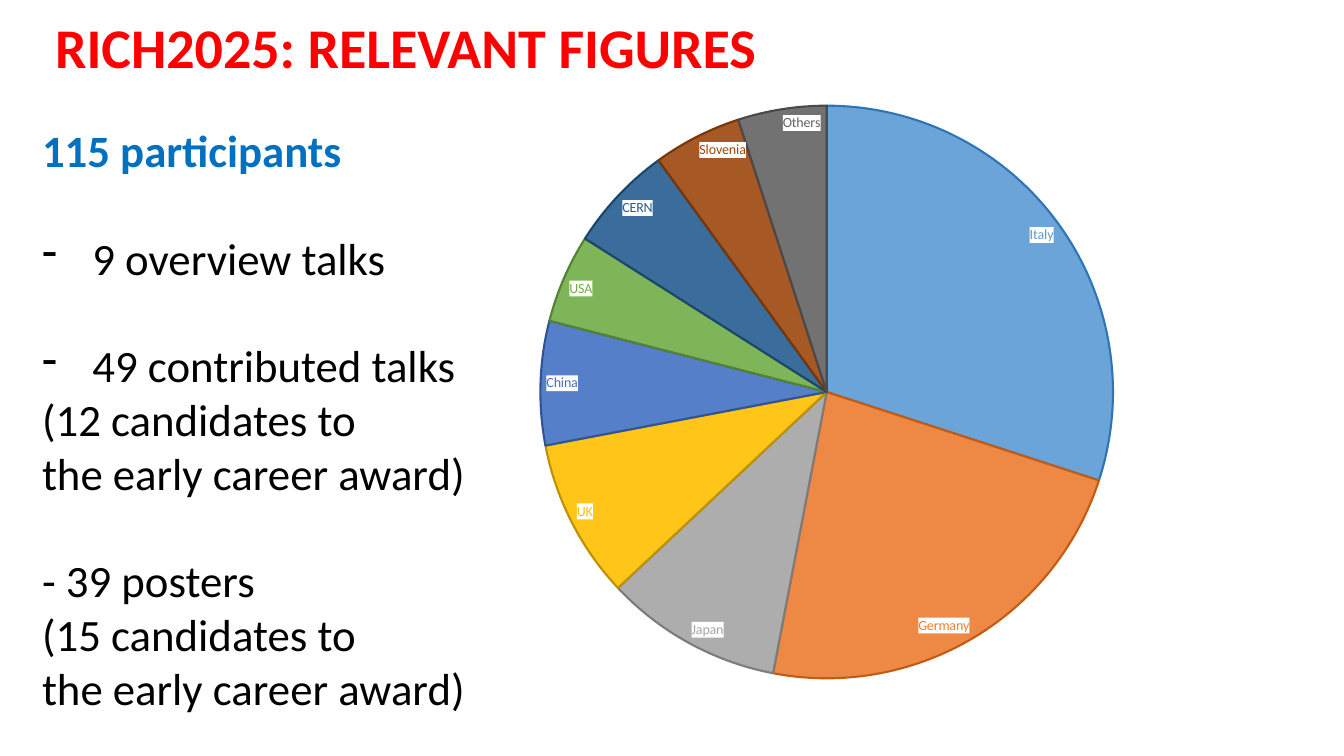
from lxml.etree import SubElement
from pptx import Presentation
from pptx.chart.data import CategoryChartData
from pptx.dml.color import RGBColor
from pptx.enum.chart import XL_CHART_TYPE as ChartType, XL_LABEL_POSITION as LabelPosition
from pptx.enum.text import MSO_AUTO_SIZE as AutoSize
from pptx.oxml import parse_xml
from pptx.oxml.ns import nsdecls, qn
from pptx.util import Cm, Pt

FONT = "Calibri"


def color(hex_code):
    return RGBColor.from_string(hex_code)


def add_text(paragraph, text, size, hex_code, bold=False):
    run = paragraph.add_run()
    run.text = text
    run.font.name = FONT
    run.font.size = Pt(size)
    run.font.bold = bold
    run.font.color.rgb = color(hex_code)


deck = Presentation()
deck.slide_width, deck.slide_height = Cm(33.87), Cm(19.05)
slide = deck.slides.add_slide(deck.slide_layouts[6])

# Participation figures: text, dash bullet, gap above
figures = [
    ("115 participants", False, False),
    ("9 overview talks", True, True),
    ("49 contributed talks", True, True),
    ("(12 candidates to", False, False),
    ("the early career award)", False, False),
    ("- 39 posters", False, True),
    ("(15 candidates to", False, False),
    ("the early career award)", False, False),
]
figures_frame = slide.shapes.add_textbox(Cm(0.81), Cm(2.97), Cm(11.28), Cm(16.66)).text_frame
figures_frame.word_wrap = False
for index, (text, dashed, gap) in enumerate(figures):
    line = figures_frame.add_paragraph() if index else figures_frame.paragraphs[0]
    if gap:
        line.space_before = Pt(38.4)
    heading = index == 0
    add_text(line, text, 32, "0070C0" if heading else "000000", heading)
    if dashed:
        indent = Cm(1.27)
        properties = line._p.get_or_add_pPr()
        properties.set("marL", str(indent))
        properties.set("indent", str(-indent))
        SubElement(properties, qn("a:buChar"), char="-")

# Participants by country: name, share, fill, outline
countries = [
    ("Italy", 30, "5B9BD5", "2E75B6"),
    ("Germany", 23, "ED7D31", "C55A11"),
    ("Japan", 10, "A5A5A5", "7C7C7C"),
    ("UK", 9, "FFC000", "BF9000"),
    ("China", 7, "4472C4", "2F5597"),
    ("USA", 5, "70AD47", "548235"),
    ("CERN", 6, "255E91", "1C476D"),
    ("Slovenia", 5, "9E480E", "773609"),
    ("Others", 5, "636363", "4A4A4A"),
]
shares = CategoryChartData()
shares.categories = [country[0] for country in countries]
shares.add_series("Series 1", [country[1] for country in countries])
pie = slide.shapes.add_chart(
    ChartType.PIE, Cm(10.41), Cm(2.36), Cm(20.85), Cm(15.19), shares).chart
pie.has_legend = False
pie.has_title = False
pie.font.name = FONT
pie.font.size = Pt(10)
pie.plots[0].vary_by_categories = True

slices = pie.plots[0].series[0]
for index, (_, _, fill, outline) in enumerate(countries):
    piece = slices.points[index]
    piece.format.fill.solid()
    piece.format.fill.fore_color.rgb = color(fill)
    piece.format.line.color.rgb = color(outline)
    piece.format.line.width = Pt(1.5)
    label = piece.data_label
    label.font.size = Pt(10)
    label.font.name = FONT
    label.font.color.rgb = color(fill)
    label.position = LabelPosition.INSIDE_END

series_xml = slices._element
for slice_fill in series_xml.xpath("c:dPt/c:spPr/a:solidFill/a:srgbClr"):
    SubElement(slice_fill, qn("a:alpha"), val="90000")
for label_xml in series_xml.xpath("c:dLbls/c:dLbl"):
    label_xml.find(qn("c:showVal")).set("val", "0")
    label_xml.find(qn("c:showCatName")).set("val", "1")
    label_xml.find(qn("c:txPr")).addprevious(parse_xml(
        f'<c:spPr {nsdecls("c", "a")}><a:solidFill><a:srgbClr val="FFFFFF"/>'
        '</a:solidFill></c:spPr>'))

# Fixed place of the pie within its frame
plot_area = pie._chartSpace.xpath("c:chart/c:plotArea")[0]
for layout in plot_area.findall(qn("c:layout")):
    plot_area.remove(layout)
layout = parse_xml(f'<c:layout {nsdecls("c")}><c:manualLayout/></c:layout>')
for tag, value in [("layoutTarget", "inner"), ("xMode", "edge"), ("yMode", "edge"),
                   ("x", "0.15"), ("y", "0.02"), ("w", "0.7"), ("h", "0.95")]:
    SubElement(layout[0], qn(f"c:{tag}"), val=value)
plot_area.insert(0, layout)

title_frame = slide.shapes.add_textbox(Cm(1.14), Cm(0.18), Cm(18.36), Cm(1.96)).text_frame
title_frame.word_wrap = False
add_text(title_frame.paragraphs[0], "RICH2025: RELEVANT FIGURES", 40, "FF0000", True)

for frame in (figures_frame, title_frame):
    frame.auto_size = AutoSize.SHAPE_TO_FIT_TEXT

deck.save("out.pptx")
